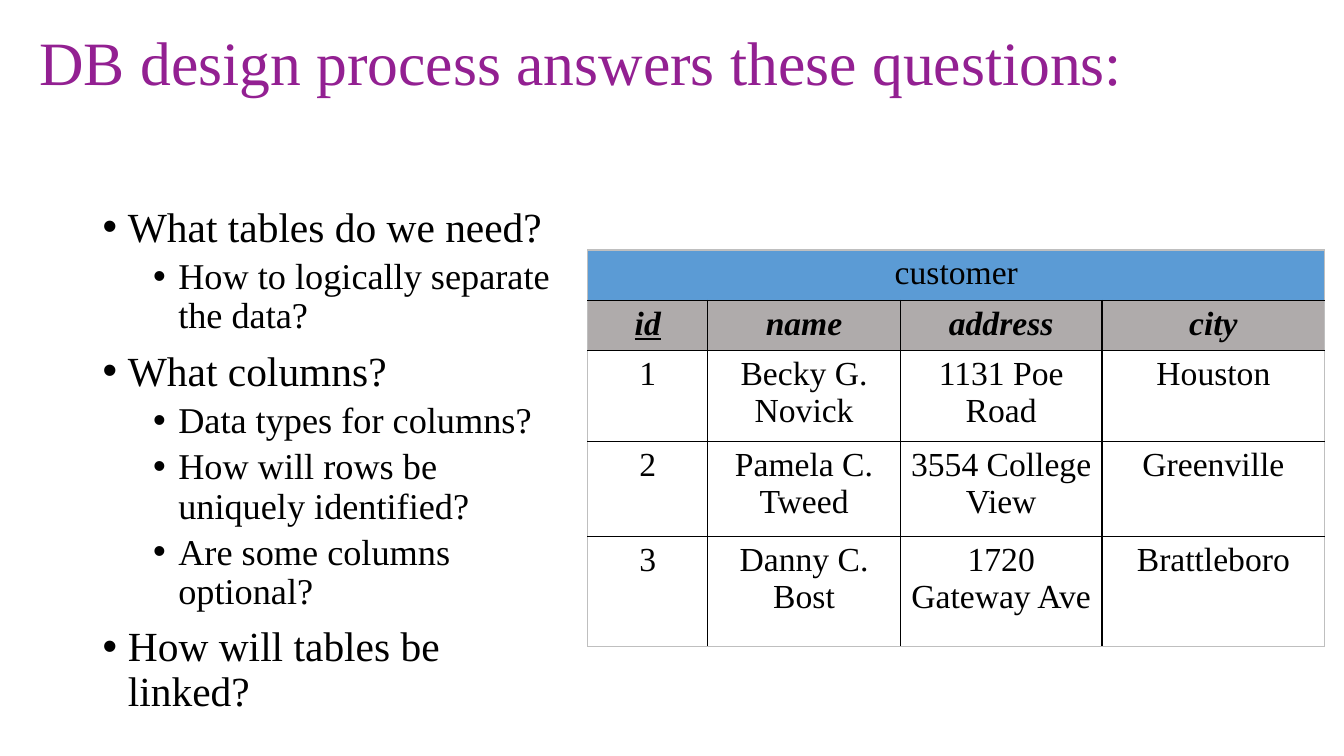
import dataclasses

import lxml.etree
import pptx
import pptx.dml.color
import pptx.enum.text
import pptx.oxml.ns
import pptx.util

Inches = pptx.util.Inches
Pt = pptx.util.Pt


@dataclasses.dataclass(frozen=True)
class Theme:
    """Colours, font and type sizes of the slide."""

    font: str = "Times New Roman"
    title_color: str = "932092"
    text_color: str = "000000"
    name_fill: str = "5B9BD5"
    header_fill: str = "AFABAB"
    inner_line: str = "000000"
    outer_line: str = "BFBFBF"
    title_size: float = 44
    bullet_sizes: tuple = (29.6, 25.9)
    table_size: float = 24


THEME = Theme()

QUESTIONS = [
    (0, "What tables do we need?"),
    (1, "How to logically separate the data?"),
    (0, "What columns?"),
    (1, "Data types for columns?"),
    (1, "How will rows be uniquely identified?"),
    (1, "Are some columns optional?"),
    (0, "How will tables be linked?"),
]
CUSTOMERS = [
    ("customer", "", "", ""),
    ("id", "name", "address", "city"),
    ("1", "Becky G. Novick", "1131 Poe Road", "Houston"),
    ("2", "Pamela C. Tweed", "3554 College View", "Greenville"),
    ("3", "Danny C. Bost", "1720 Gateway Ave", "Brattleboro"),
]
COLUMN_WIDTHS = (1.19, 1.91, 2, 2.21)
ROW_HEIGHTS = (0.45, 0.45, 0.82, 0.94, 1.09)


def rgb(color):
    """Turn a hex string into a colour."""
    return pptx.dml.color.RGBColor.from_string(color)


def add_span(para, text, size, color=THEME.text_color):
    """Add one formatted run to a paragraph."""
    span = para.add_run()
    span.text = text
    span.font.name = THEME.font
    span.font.size = Pt(size)
    span.font.color.rgb = rgb(color)
    return span


def add_element(parent, tag, **attributes):
    """Append a drawing element to its parent."""
    element = lxml.etree.SubElement(parent, pptx.oxml.ns.qn(tag))
    for name, value in attributes.items():
        element.set(name, str(value))
    return element


def set_title(page, text):
    """Place and fill the title."""
    title = page.shapes.title
    title.left, title.top = Inches(0.29), Inches(0.17)
    title.width, title.height = Inches(12.73), Inches(0.97)
    frame = title.text_frame
    frame.word_wrap = True
    frame.auto_size = pptx.enum.text.MSO_AUTO_SIZE.NONE
    frame.vertical_anchor = pptx.enum.text.MSO_ANCHOR.MIDDLE
    para = frame.paragraphs[0]
    para.alignment = pptx.enum.text.PP_ALIGN.LEFT
    para.line_spacing = 0.9
    add_span(para, text, THEME.title_size, THEME.title_color)


def add_bullets(page, items):
    """Add the two-level list of questions."""
    box = page.shapes.add_textbox(Inches(0.92), Inches(2), Inches(4.76), Inches(4.76))
    frame = box.text_frame
    frame.word_wrap = True
    for index, (level, text) in enumerate(items):
        para = frame.add_paragraph() if index else frame.paragraphs[0]
        para.level = level
        para.line_spacing = 0.9
        para.space_before = Pt(5 if level else 10)
        add_span(para, text, THEME.bullet_sizes[level])
        properties = para._p.get_or_add_pPr()
        properties.set("marL", str(Inches(0.25 + 0.5 * level)))
        properties.set("indent", str(Inches(-0.25)))
        add_element(properties, "a:buFont", typeface="Arial")
        add_element(properties, "a:buChar", char="•")


def set_borders(cell, outer_sides):
    """Draw the four borders of a cell, paler on the outer edge."""
    properties = cell._tc.get_or_add_tcPr()
    for side in "LRTB":
        color = THEME.outer_line if side in outer_sides else THEME.inner_line
        line = add_element(properties, f"a:ln{side}", w=Pt(1))
        fill = add_element(line, "a:solidFill")
        add_element(fill, "a:srgbClr", val=color)


def fill_cell(cell, text, row):
    """Fill a cell and write its centred text."""
    if row < 2:
        cell.fill.solid()
        cell.fill.fore_color.rgb = rgb((THEME.name_fill, THEME.header_fill)[row])
    else:
        cell.fill.background()
    if not text:
        return
    para = cell.text_frame.paragraphs[0]
    para.alignment = pptx.enum.text.PP_ALIGN.CENTER
    span = add_span(para, text, THEME.table_size)
    span.font.bold = span.font.italic = row == 1
    span.font.underline = text == "id"


def add_customer_table(page, rows):
    """Add the customer table with its merged name row."""
    last_row, last_column = len(rows) - 1, len(COLUMN_WIDTHS) - 1
    table = page.shapes.add_table(
        len(rows), len(COLUMN_WIDTHS), Inches(5.83), Inches(2.48),
        Inches(sum(COLUMN_WIDTHS)), Inches(sum(ROW_HEIGHTS)),
    ).table
    table.first_row = table.horz_banding = False
    for column, width in zip(table.columns, COLUMN_WIDTHS):
        column.width = Inches(width)
    for row, height in zip(table.rows, ROW_HEIGHTS):
        row.height = Inches(height)
    table.cell(0, 0).merge(table.cell(0, last_column))
    for r, values in enumerate(rows):
        for c, text in enumerate(values):
            edges = {"T": r == 0, "B": r == last_row,
                     "L": c == 0, "R": c == last_column or r == 0}
            cell = table.cell(r, c)
            set_borders(cell, [side for side, outer in edges.items() if outer])
            fill_cell(cell, text, r)


def main():
    """Build and save the deck."""
    deck = pptx.Presentation()
    deck.slide_width, deck.slide_height = Inches(13.33), Inches(7.5)
    page = deck.slides.add_slide(deck.slide_layouts.get_by_name("Title Only"))
    set_title(page, "DB design process answers these questions:")
    add_bullets(page, QUESTIONS)
    add_customer_table(page, CUSTOMERS)
    deck.save("out.pptx")


if __name__ == "__main__":
    main()
